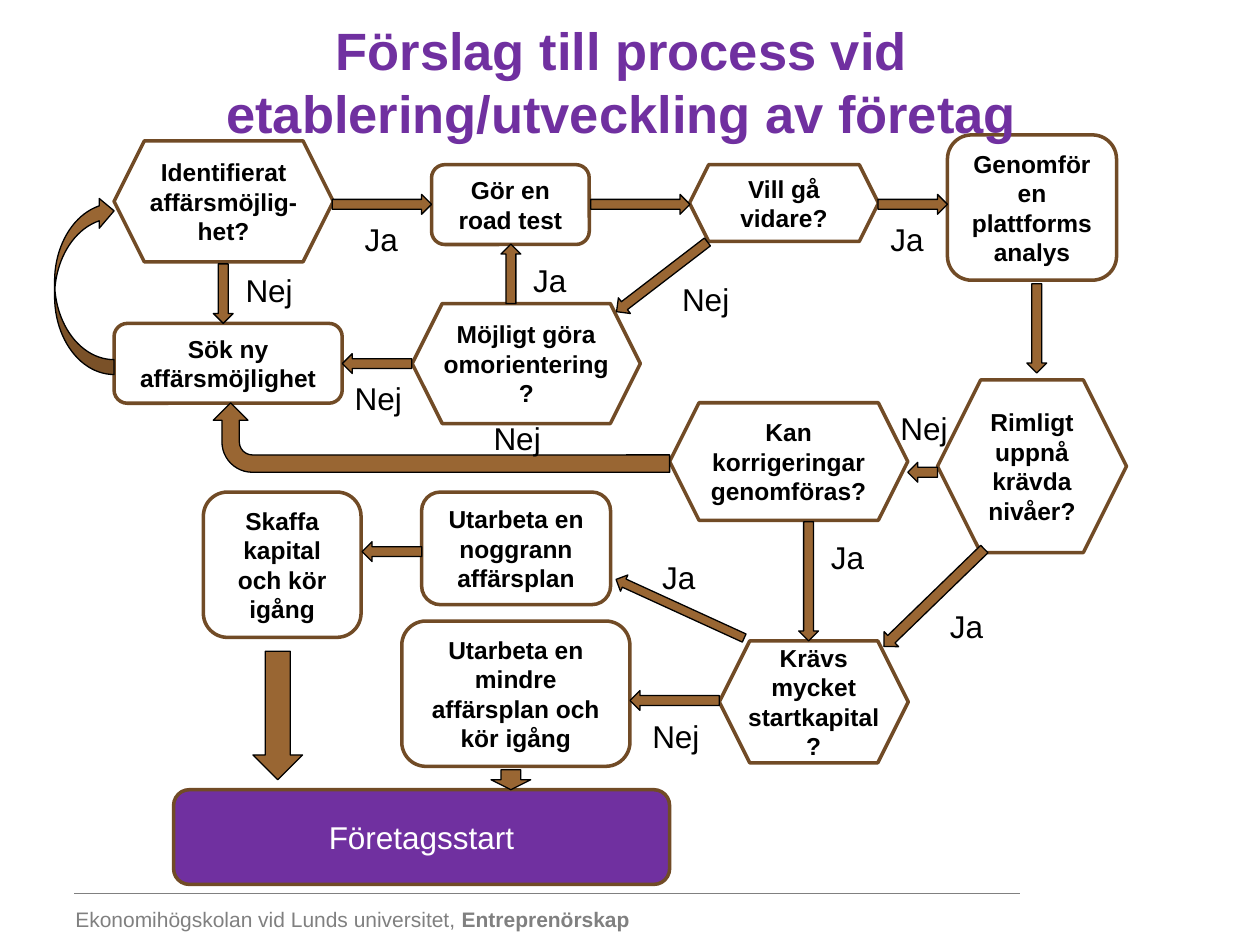
from pptx import Presentation
from pptx.dml.color import RGBColor
from pptx.enum import shapes, text
from pptx.oxml import ns
from pptx.util import Cm, Pt

THEME = {
    "font": "Arial", "ink": "000000", "accent": "7030A0", "border": "714B26",
    "arrow": "996633", "muted": "808080", "light": "FFFFFF",
    "title": 30, "label": 18, "node": 14, "footer": 12,
}
SHAPE = shapes.MSO_SHAPE
ALIGN = text.PP_ALIGN

TITLE = "Förslag till process vid etablering/utveckling av företag"
FOOTER = [("Ekonomihögskolan vid Lunds universitet, ", False), ("Entreprenörskap", True)]

QUESTIONS = [
    ("Identifierat affärsmöjlig- het?", 2.3, 2.84, 4.42, 2.44),
    ("Möjligt göra omorientering?", 8.31, 6.12, 4.6, 2.42),
    ("Vill gå vidare?", 13.9, 3.32, 3.81, 1.55),
    ("Krävs mycket startkapital?", 14.5, 12.92, 3.81, 2.46),
    ("Kan korrigeringar genomföras?", 13.5, 8.12, 4.8, 2.37),
    ("Rimligt uppnå krävda nivåer?", 18.9, 7.66, 3.81, 3.48),
]
STEPS = [
    ("Gör en road test", 8.7, 3.32, 3.18, 1.61),
    ("Skaffa kapital och kör igång", 4.1, 9.92, 3.18, 2.93),
    ("Utarbeta en noggrann affärsplan", 8.5, 9.92, 3.81, 2.27),
    ("Sök ny affärsmöjlighet", 2.3, 6.52, 4.6, 1.61),
    ("Utarbeta en mindre affärsplan och kör igång", 8.1, 12.52, 4.6, 2.93),
    ("Genomför en plattformsanalys", 19.1, 2.72, 3.41, 2.93),
]
START = ("Företagsstart", 3.5, 15.92, 10, 1.91)

ARROWS = [
    (SHAPE.RIGHT_ARROW, 11.91, 3.92, 2, 0.4, 0),
    (SHAPE.RIGHT_ARROW, 20, 6.42, 1.8, 0.4, 90),
    (SHAPE.CURVED_LEFT_ARROW, 1.1, 3.95, 1.2, 3.6, 180),
    (SHAPE.RIGHT_ARROW, 7.3, 10.92, 1.2, 0.4, 180),
    (SHAPE.DOWN_ARROW, 5.1, 13.13, 1, 2.59, 0),
    (SHAPE.DOWN_ARROW, 9.9, 15.52, 0.8, 0.4, 0),
    (SHAPE.RIGHT_ARROW, 6.7, 3.92, 2, 0.4, 0),
    (SHAPE.RIGHT_ARROW, 3.9, 5.72, 1.2, 0.4, 90),
    (SHAPE.RIGHT_ARROW, 17.42, 11.84, 2.82, 0.42, 135.9),
    (SHAPE.RIGHT_ARROW, 15.1, 11.52, 2.4, 0.4, 90),
    (SHAPE.RIGHT_ARROW, 12.29, 12.09, 2.84, 0.36, 204.6),
    (SHAPE.RIGHT_ARROW, 9.7, 5.32, 1.2, 0.4, 270),
    (SHAPE.RIGHT_ARROW, 17.7, 3.92, 1.4, 0.4, 0),
    (SHAPE.RIGHT_ARROW, 12.19, 5.38, 2.31, 0.4, 142.5),
    (SHAPE.BENT_ARROW, 8.2, 4.22, 1.4, 9.2, 270),
    (SHAPE.RIGHT_ARROW, 18.3, 9.32, 0.6, 0.4, 180),
    (SHAPE.RIGHT_ARROW, 12.7, 13.92, 1.8, 0.4, 180),
    (SHAPE.RIGHT_ARROW, 6.9, 7.13, 1.4, 0.4, 180),
]
ANSWERS = {
    "Ja": [(7.1, 4.32), (18.9, 12.12), (16.5, 10.72), (13.1, 11.12), (10.5, 5.13), (17.7, 4.32)],
    "Nej": [(4.7, 5.33), (13.5, 5.53), (9.7, 8.33), (17.9, 8.13), (12.9, 14.33), (6.9, 7.52)],
}
ANSWER_WIDTH = {"Ja": 1.19, "Nej": 1.6}


def color(name):
    return RGBColor.from_string(THEME[name])


def write(sp, content, size="node", ink="ink", bold=False, align=ALIGN.CENTER,
          anchor=text.MSO_ANCHOR.MIDDLE, wrap=True, inset=None):
    tf = sp.text_frame
    tf.word_wrap = wrap
    tf.vertical_anchor = anchor
    if inset is not None:
        tf.margin_left = tf.margin_right = tf.margin_top = tf.margin_bottom = Cm(inset)
    p = tf.paragraphs[0]
    p.alignment = align
    runs = [(content, bold)] if isinstance(content, str) else content
    for words, strong in runs:
        r = p.add_run()
        r.text = words
        r.font.name = THEME["font"]
        r.font.size = Pt(THEME[size])
        r.font.bold = strong
        r.font.color.rgb = color(ink)


def add_shape(s, kind, box, fill=None, line="border", weight=2):
    sp = s.shapes.add_shape(kind, *map(Cm, box))
    sp.shadow.inherit = False
    if fill:
        sp.fill.solid()
        sp.fill.fore_color.rgb = color(fill)
    else:
        sp.fill.background()
    sp.line.color.rgb = color(line)
    sp.line.width = Pt(weight)
    return sp


def add_text(s, box, content, **style):
    write(s.shapes.add_textbox(*map(Cm, box)), content, **style)


def add_rule(s, x1, x2, y):
    rule = s.shapes.add_connector(shapes.MSO_CONNECTOR.STRAIGHT, Cm(x1), Cm(y), Cm(x2), Cm(y))
    rule.line.color.rgb = color("muted")
    rule.line.width = Pt(0.5)
    props = rule._element.spPr
    props.append(props.makeelement(ns.qn("a:effectLst"), {}))


def main():
    prs = Presentation()
    prs.slide_width, prs.slide_height = Cm(25.4), Cm(19.05)
    s = prs.slides.add_slide(prs.slide_layouts[6])

    add_text(s, (1.27, 18.16, 11.96, 0.76), FOOTER, size="footer", ink="muted",
             align=ALIGN.LEFT, anchor=text.MSO_ANCHOR.TOP, wrap=False)
    add_rule(s, 1.5, 20.57, 18.01)

    for label, *box in QUESTIONS:
        write(add_shape(s, SHAPE.HEXAGON, box), label, bold=True, inset=0)
    for label, *box in STEPS:
        write(add_shape(s, SHAPE.ROUNDED_RECTANGLE, box), label, bold=True)
    label, *box = START
    write(add_shape(s, SHAPE.ROUNDED_RECTANGLE, box, fill="accent"), label,
          size="label", ink="light")

    for kind, *box, angle in ARROWS:
        add_shape(s, kind, box, fill="arrow", line="ink", weight=0.75).rotation = angle

    add_text(s, (1.1, 0.53, 22.86, 2.21), TITLE, size="title", ink="accent", bold=True)
    for answer, places in ANSWERS.items():
        for x, y in places:
            add_text(s, (x, y, ANSWER_WIDTH[answer], 1.02), answer, size="label",
                     align=ALIGN.LEFT, anchor=text.MSO_ANCHOR.TOP, wrap=answer == "Nej")

    prs.save("out.pptx")


if __name__ == "__main__":
    main()
